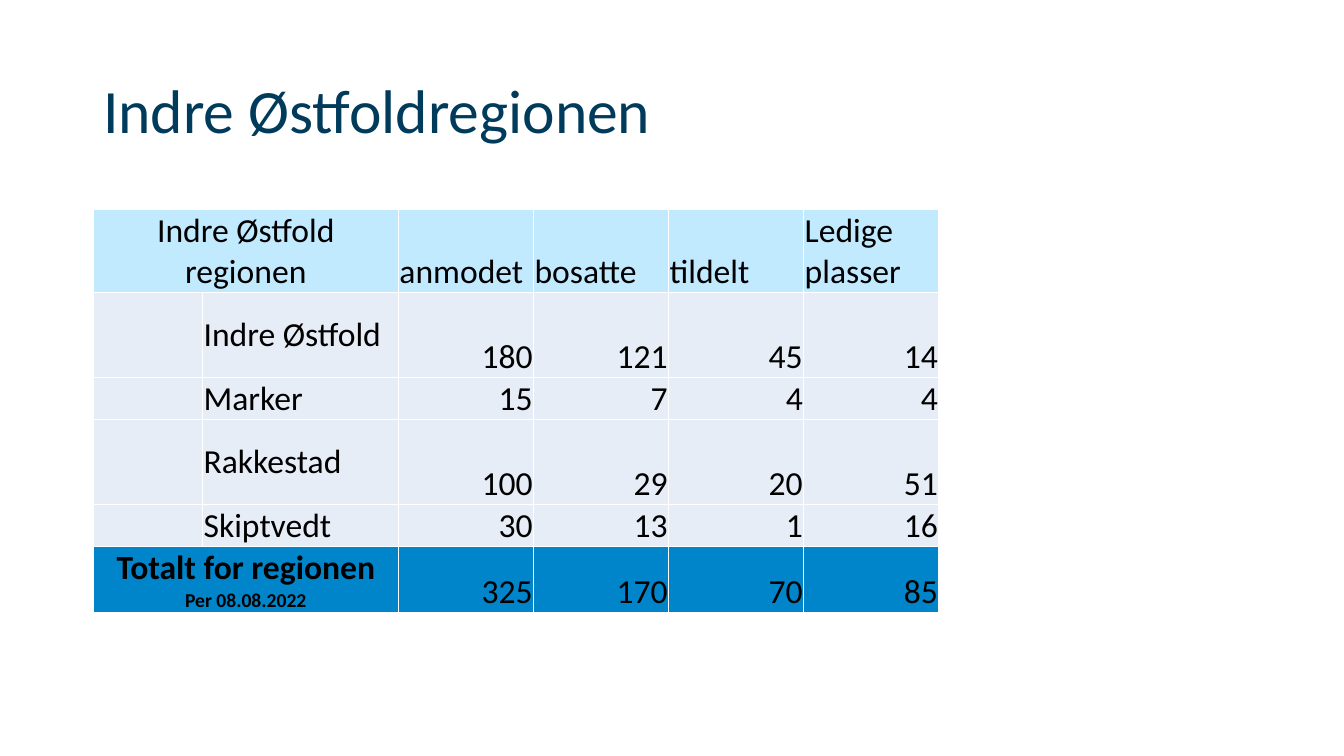
from dataclasses import dataclass

from lxml import etree
from pptx import Presentation
from pptx.dml.color import RGBColor
from pptx.enum.text import MSO_ANCHOR, PP_ALIGN
from pptx.oxml.ns import qn
from pptx.slide import Slide
from pptx.table import _Cell
from pptx.text.text import TextFrame
from pptx.util import Inches, Length, Pt

LEFT, CENTER, RIGHT = PP_ALIGN.LEFT, PP_ALIGN.CENTER, PP_ALIGN.RIGHT
MIDDLE, BOTTOM = MSO_ANCHOR.MIDDLE, MSO_ANCHOR.BOTTOM


@dataclass(frozen=True)
class Theme:
    font: str = "Calibri"
    title_color: str = "003B5C"
    text_color: str = "000000"
    border_color: str = "FFFFFF"
    header_fill: str = "C1EAFF"
    body_fill: str = "E7EDF6"
    total_fill: str = "0085CA"
    title_size: int = 44
    table_size: int = 24
    date_size: int = 14
    border_width: int = 1


@dataclass(frozen=True)
class Line:
    text: str
    size: int
    color: str
    bold: bool = False
    alignment: PP_ALIGN = LEFT
    spacing: float = 1.0


@dataclass(frozen=True)
class RegionRow:
    label: tuple[Line, ...]
    values: tuple[str, ...]
    fill: str
    height: float
    label_anchor: MSO_ANCHOR = MIDDLE
    value_alignment: PP_ALIGN = RIGHT
    spans_label: bool = False


THEME = Theme()
COLUMN, ROW = 1.34, 0.42
COLUMN_SPANS = (0.81, 1.45, 1, 1, 1, 1)
LEFT_EDGE, TITLE_TOP, TABLE_TOP = 0.69, 0.95, 4.95
TITLE_WIDTH, TITLE_HEIGHT = 8.58, 3.45
CELL_MARGINS = {
    "margin_left": Inches(0.01),
    "margin_right": Inches(0.01),
    "margin_top": Inches(0.01),
    "margin_bottom": 0,
}


def columns(count: float) -> Length:
    return Inches(count * COLUMN)


def rows(count: float) -> Length:
    return Inches(count * ROW)


def table_line(text: str, **formats) -> Line:
    return Line(text, **{"size": THEME.table_size, "color": THEME.text_color, **formats})


def municipality(name: str, height: float, *values: str) -> RegionRow:
    return RegionRow((table_line(name),), values, THEME.body_fill, height)


REGION_ROWS = (
    RegionRow(
        (table_line("Indre Østfold regionen", alignment=CENTER),),
        ("anmodet", "bosatte", "tildelt", "Ledige plasser"),
        THEME.header_fill, 1.96, BOTTOM, LEFT, True,
    ),
    municipality("Indre Østfold", 2, "180", "121", "45", "14"),
    municipality("Marker", 1, "15", "7", "4", "4"),
    municipality("Rakkestad", 2, "100", "29", "20", "51"),
    municipality("Skiptvedt", 1, "30", "13", "1", "16"),
    RegionRow(
        (
            table_line("Totalt for regionen", bold=True, alignment=CENTER),
            table_line("Per 08.08.2022", size=THEME.date_size, bold=True, alignment=CENTER),
        ),
        ("325", "170", "70", "85"),
        THEME.total_fill, 1.56, spans_label=True,
    ),
)


def write_lines(frame: TextFrame, lines: tuple[Line, ...]) -> None:
    for index, line in enumerate(lines):
        paragraph = frame.add_paragraph() if index else frame.paragraphs[0]
        paragraph.alignment = line.alignment
        paragraph.line_spacing = line.spacing
        run = paragraph.add_run()
        run.text = line.text
        formats = {"name": THEME.font, "size": Pt(line.size), "bold": line.bold}
        for name, value in formats.items():
            setattr(run.font, name, value)
        run.font.color.rgb = RGBColor.from_string(line.color)


def add_borders(cell: _Cell) -> None:
    properties = cell._tc.get_or_add_tcPr()
    for side in ("a:lnL", "a:lnR", "a:lnT", "a:lnB"):
        border = etree.SubElement(properties, qn(side), w=str(Pt(THEME.border_width)))
        fill = etree.SubElement(border, qn("a:solidFill"))
        etree.SubElement(fill, qn("a:srgbClr"), val=THEME.border_color)


def format_cell(cell: _Cell, fill: str, anchor: MSO_ANCHOR) -> None:
    add_borders(cell)
    cell.fill.solid()
    cell.fill.fore_color.rgb = RGBColor.from_string(fill)
    for name, value in {**CELL_MARGINS, "vertical_anchor": anchor}.items():
        setattr(cell, name, value)


def add_title(slide: Slide) -> None:
    box = slide.shapes.add_textbox(
        columns(LEFT_EDGE), rows(TITLE_TOP), columns(TITLE_WIDTH), rows(TITLE_HEIGHT)
    )
    for name, value in {"word_wrap": True, "vertical_anchor": MIDDLE}.items():
        setattr(box.text_frame, name, value)
    title = Line("Indre Østfoldregionen", THEME.title_size, THEME.title_color, spacing=0.9)
    write_lines(box.text_frame, (title,))


def add_region_table(slide: Slide) -> None:
    table = slide.shapes.add_table(
        len(REGION_ROWS), len(COLUMN_SPANS), columns(LEFT_EDGE), rows(TABLE_TOP),
        columns(sum(COLUMN_SPANS)), rows(sum(row.height for row in REGION_ROWS)),
    ).table
    for name in ("first_row", "horz_banding"):
        setattr(table, name, False)
    for column, span in zip(table.columns, COLUMN_SPANS):
        column.width = columns(span)
    for row_index, row in enumerate(REGION_ROWS):
        table.rows[row_index].height = rows(row.height)
        for column_index in range(len(COLUMN_SPANS)):
            anchor = row.label_anchor if column_index < 2 else BOTTOM
            format_cell(table.cell(row_index, column_index), row.fill, anchor)
        label_cell = table.cell(row_index, 0 if row.spans_label else 1)
        if row.spans_label:
            label_cell.merge(table.cell(row_index, 1))
        write_lines(label_cell.text_frame, row.label)
        for column_index, value in enumerate(row.values, start=2):
            line = table_line(value, alignment=row.value_alignment)
            write_lines(table.cell(row_index, column_index).text_frame, (line,))


def main() -> None:
    presentation = Presentation()
    presentation.slide_width = Inches(13.33)
    presentation.slide_height = Inches(7.5)
    slide = presentation.slides.add_slide(presentation.slide_layouts[6])
    add_title(slide)
    add_region_table(slide)
    presentation.save("out.pptx")


if __name__ == "__main__":
    main()
